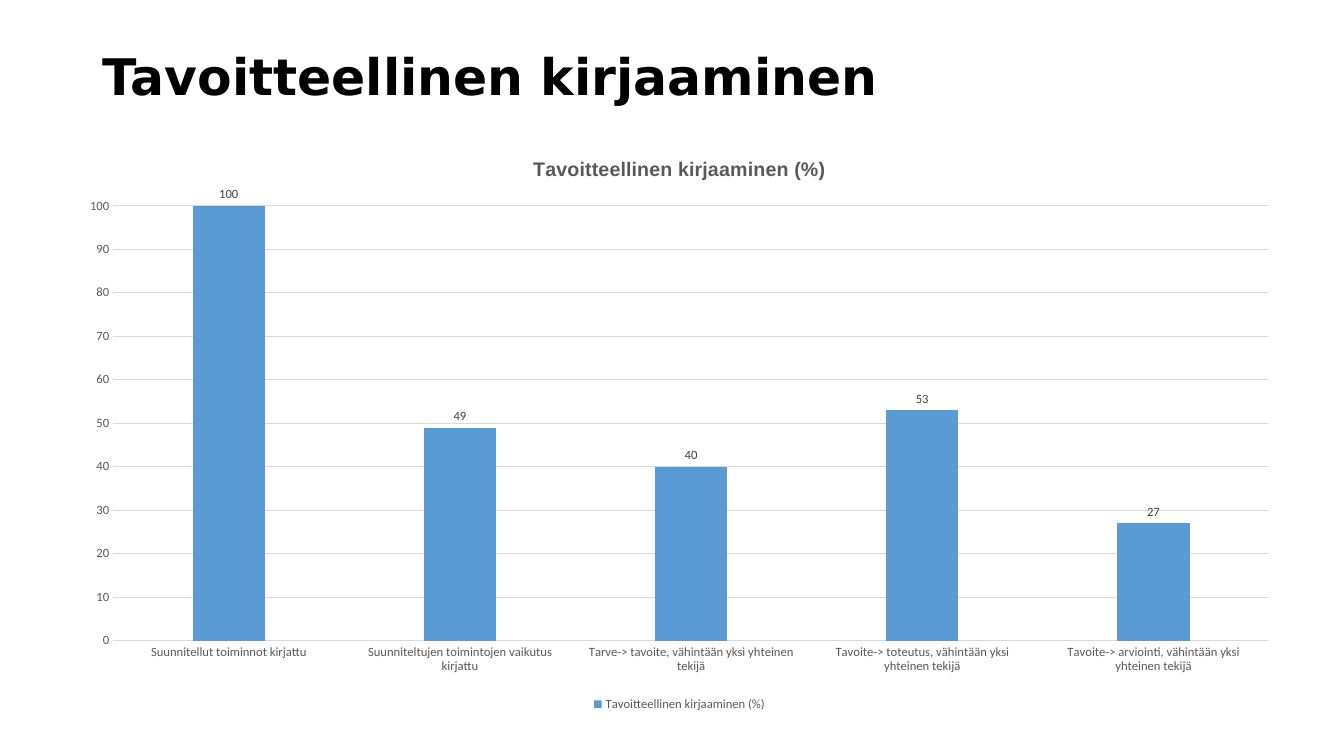
"""Build a slide with a column chart on goal-oriented record keeping."""
from pptx import Presentation
from pptx.chart.data import CategoryChartData
from pptx.dml.color import RGBColor
from pptx.enum.chart import XL_CHART_TYPE as ChartType, XL_LABEL_POSITION as LabelPosition
from pptx.enum.chart import XL_LEGEND_POSITION as LegendPosition, XL_TICK_MARK as TickMark
from pptx.enum.text import MSO_ANCHOR as Anchor
from pptx.util import Inches, Pt

BLACK = RGBColor(0x00, 0x00, 0x00)
GREY = RGBColor(0x59, 0x59, 0x59)
DARK_GREY = RGBColor(0x40, 0x40, 0x40)
LIGHT_GREY = RGBColor(0xD9, 0xD9, 0xD9)
BLUE = RGBColor(0x5B, 0x9B, 0xD5)

HEADING = "Tavoitteellinen kirjaaminen"
SERIES_NAME = f"{HEADING} (%)"
RESULTS = {
    "Suunnitellut toiminnot kirjattu": 100,
    "Suunniteltujen toimintojen vaikutus kirjattu": 49,
    "Tarve-> tavoite, vähintään yksi yhteinen tekijä": 40,
    "Tavoite-> toteutus, vähintään yksi yhteinen tekijä": 53,
    "Tavoite-> arviointi, vähintään yksi yhteinen tekijä": 27,
}


def set_font(font, name, size, color, bold=False):
    values = {"name": name, "size": Pt(size), "bold": bold}
    for attribute, value in values.items():
        setattr(font, attribute, value)
    font.color.rgb = color


presentation = Presentation()
presentation.slide_width = Inches(13.33)
presentation.slide_height = Inches(7.5)
slide = presentation.slides.add_slide(presentation.slide_layouts[6])

heading = slide.shapes.add_textbox(Inches(0.92), Inches(0.4), Inches(8.22), Inches(0.77))
heading.text_frame.word_wrap = True
heading.text_frame.vertical_anchor = Anchor.MIDDLE
paragraph = heading.text_frame.paragraphs[0]
paragraph.line_spacing = 0.9
run = paragraph.add_run()
run.text = HEADING
set_font(run.font, "DejaVu Sans", 36, BLACK, True)

chart_data = CategoryChartData(number_format="General")
chart_data.categories = list(RESULTS)
chart_data.add_series(SERIES_NAME, list(RESULTS.values()))
chart = slide.shapes.add_chart(
    ChartType.COLUMN_CLUSTERED,
    Inches(0.65), Inches(1.35), Inches(12.18), Inches(5.75), chart_data,
).chart
set_font(chart.font, "Calibri", 10, BLACK)

chart.has_title = True
chart.chart_title.include_in_layout = False
title_run = chart.chart_title.text_frame.paragraphs[0].add_run()
title_run.text = SERIES_NAME
set_font(title_run.font, "Arial", 14, GREY, True)

chart.has_legend = True
chart.legend.position = LegendPosition.BOTTOM
chart.legend.include_in_layout = False
set_font(chart.legend.font, "Calibri", 9, GREY)

for axis in (chart.category_axis, chart.value_axis):
    axis.major_tick_mark = TickMark.NONE
    axis.minor_tick_mark = TickMark.NONE
    set_font(axis.tick_labels.font, "Calibri", 9, GREY)

value_axis = chart.value_axis
value_axis.minimum_scale = 0
value_axis.maximum_scale = 100
value_axis.major_unit = 10
value_axis.has_major_gridlines = True
value_axis.format.line.fill.background()
for line in (chart.category_axis.format.line, value_axis.major_gridlines.format.line):
    line.color.rgb = LIGHT_GREY
    line.width = Pt(0.75)

plot = chart.plots[0]
plot.gap_width = 219
plot.overlap = -27
plot.vary_by_categories = False
series = plot.series[0]
series.format.fill.solid()
series.format.fill.fore_color.rgb = BLUE
labels = series.data_labels
labels.show_value = True
labels.position = LabelPosition.OUTSIDE_END
set_font(labels.font, "Calibri", 9, DARK_GREY)

presentation.save("out.pptx")
